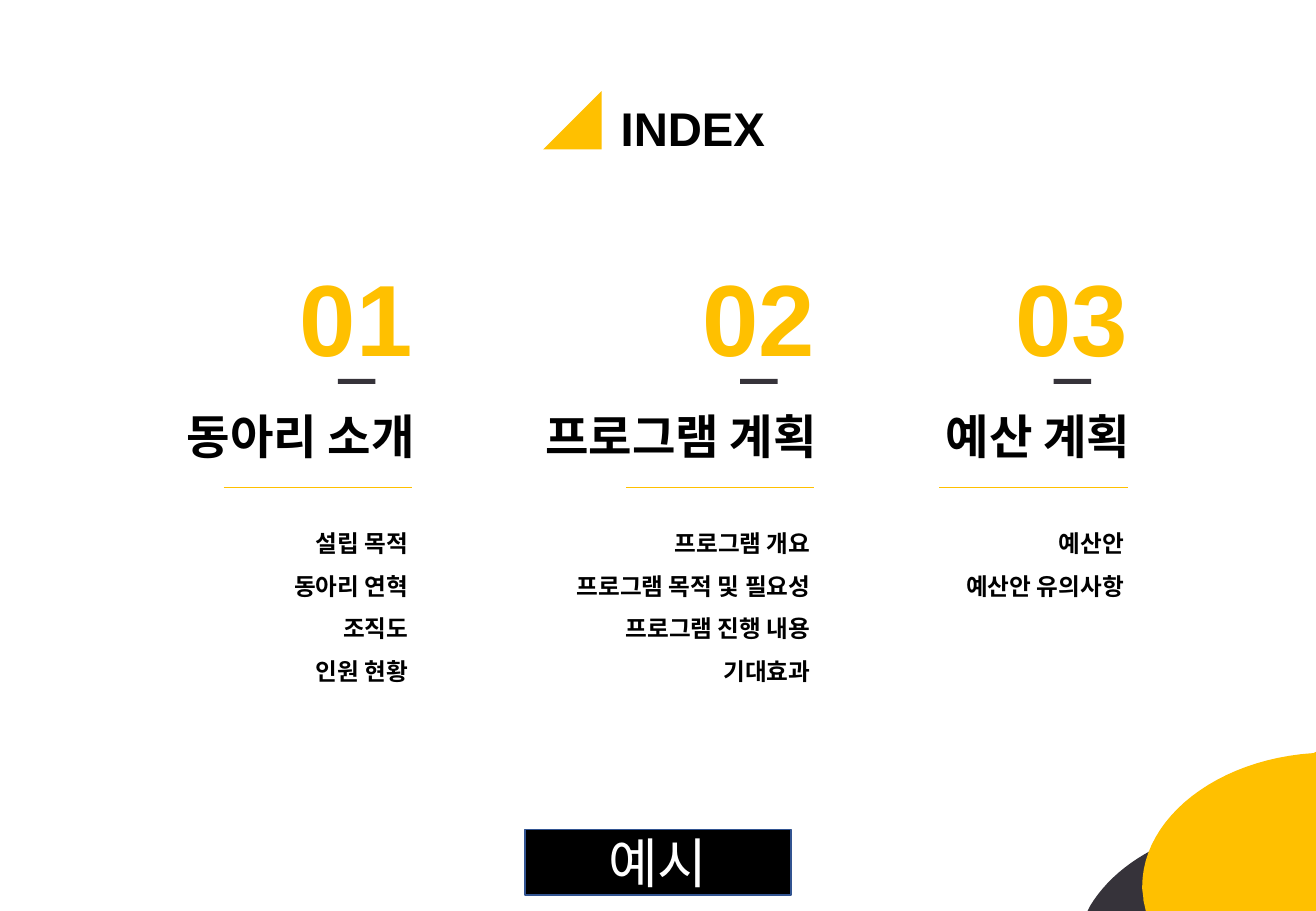
import pptx
import pptx.util
import pptx.dml.color
import pptx.enum.shapes
import pptx.enum.text
from lxml import etree

Inches = pptx.util.Inches
Shape = pptx.enum.shapes.MSO_SHAPE
Align = pptx.enum.text.PP_ALIGN

TITLE = "INDEX"
BADGE = "예시"
# right: end of the rule; widths: heading box and topic box
SECTIONS = [
    dict(heading="동아리 소개", right=3.39, widths=(2.3, 1.25),
         topics=["설립 목적", "동아리 연혁", "조직도", "인원 현황"]),
    dict(heading="프로그램 계획", right=6.7, widths=(2.7, 2.37),
         topics=["프로그램 개요", "프로그램 목적 및 필요성",
                 "프로그램 진행 내용", "기대효과"]),
    dict(heading="예산 계획", right=9.28, widths=(1.91, 1.64),
         topics=["예산안", "예산안 유의사항"]),
]
THEME = dict(
    font="Arial", yellow="FFC000", dark="36333A", black="000000",
    white="FFFFFF", badge_line="325491",
    title=28, number=60, heading=28, topic=14, badge=32,
)
# Corner outlines: a pair is a straight step, a triple of pairs a Bézier step
DARK_CORNER = [
    (10.41, 6.78), ((10.52, 6.78), (10.63, 6.79), (10.73, 6.8)),
    (10.83, 6.82), (10.83, 7.5), (8.95, 7.5), (8.97, 7.46),
    ((9.21, 7.06), (9.76, 6.78), (10.41, 6.78)),
]
YELLOW_CORNER = [
    (10.83, 6.19), (10.83, 7.5), (9.43, 7.5), (9.41, 7.41),
    ((9.41, 7.37), (9.4, 7.34), (9.4, 7.3)),
    ((9.4, 6.73), (10.02, 6.25), (10.81, 6.2)),
]
CURVE_STEPS = 24


def color(name):
    return pptx.dml.color.RGBColor.from_string(THEME[name])


def paint(shape, fill):
    shape.shadow.inherit = False
    shape.fill.solid()
    shape.fill.fore_color.rgb = color(fill)
    shape.line.fill.background()
    return shape


def add_block(kind, left, top, width, height, fill):
    return paint(slide.shapes.add_shape(
        kind, Inches(left), Inches(top), Inches(width), Inches(height)), fill)


def write(frame, lines, size, ink, align, bold=True, spacing=None):
    for index, line in enumerate(lines):
        paragraph = frame.paragraphs[0] if index == 0 else frame.add_paragraph()
        paragraph.text = line
        paragraph.alignment = align
        paragraph.line_spacing = spacing
        paragraph.font.name = THEME["font"]
        paragraph.font.size = pptx.util.Pt(THEME[size])
        paragraph.font.bold = bold
        paragraph.font.color.rgb = color(ink)


def add_text(lines, left, top, width, height, size, ink="black",
             align=Align.LEFT, spacing=None):
    frame = slide.shapes.add_textbox(
        Inches(left), Inches(top), Inches(width), Inches(height)).text_frame
    frame.word_wrap = False
    frame.auto_size = pptx.enum.text.MSO_AUTO_SIZE.SHAPE_TO_FIT_TEXT
    write(frame, lines, size, ink, align, spacing=spacing)


def add_rule(left, right, top):
    rule = slide.shapes.add_connector(
        pptx.enum.shapes.MSO_CONNECTOR.STRAIGHT,
        Inches(left), Inches(top), Inches(right), Inches(top))
    rule.line.color.rgb = color("yellow")
    rule.line.width = pptx.util.Pt(0.5)
    etree.SubElement(rule._element.spPr, pptx.oxml.ns.qn("a:effectLst"))


def flatten(outline):
    """Turn the outline's Bézier steps into short straight ones."""
    points = [outline[0]]
    for step in outline[1:]:
        if len(step) == 2:
            points.append(step)
            continue
        controls = (points[-1], *step)
        for i in range(1, CURVE_STEPS + 1):
            t = i / CURVE_STEPS
            weights = ((1 - t) ** 3, 3 * t * (1 - t) ** 2,
                       3 * t ** 2 * (1 - t), t ** 3)
            points.append(tuple(
                sum(w * c[axis] for w, c in zip(weights, controls))
                for axis in (0, 1)))
    return points


def add_corner(outline, fill):
    points = [(Inches(x), Inches(y)) for x, y in flatten(outline)]
    builder = slide.shapes.build_freeform(*points[0])
    builder.add_line_segments(points[1:], close=True)
    paint(builder.convert_to_shape(), fill)


def add_section(number, heading, right, widths, topics):
    heading_width, topic_width = widths
    add_text([f"{number:02}"], right - 1.02, 2.05, 1.18, 1.11,
             "number", "yellow")
    add_block(Shape.RECTANGLE, right - 0.61, 3.12, 0.31, 0.04, "dark")
    add_text([heading], right + 0.12 - heading_width, 3.3, heading_width, 0.57,
             "heading", align=Align.RIGHT)
    add_rule(right - 1.55, right, 4.01)
    add_text(topics, right + 0.07 - topic_width, 4.19, topic_width,
             0.11 + 0.35 * len(topics), "topic", align=Align.RIGHT, spacing=1.5)


deck = pptx.Presentation()
deck.slide_width, deck.slide_height = Inches(10.83), Inches(7.5)
slide = deck.slides.add_slide(deck.slide_layouts[6])

triangle = add_block(Shape.RIGHT_TRIANGLE, 4.47, 0.75, 0.48, 0.48, "yellow")
triangle.rotation = 270
add_text([TITLE], 5.01, 0.77, 1.41, 0.57, "title")

for number, section in enumerate(SECTIONS, start=1):
    add_section(number, **section)

badge = add_block(Shape.RECTANGLE, 4.32, 6.83, 2.19, 0.54, "black")
badge.line.color.rgb = color("badge_line")
badge.line.width = pptx.util.Pt(1)
badge.text_frame.vertical_anchor = pptx.enum.text.MSO_ANCHOR.MIDDLE
write(badge.text_frame, [BADGE], "badge", "white", Align.CENTER, bold=False)

add_corner(DARK_CORNER, "dark")
add_corner(YELLOW_CORNER, "yellow")

deck.save("out.pptx")
